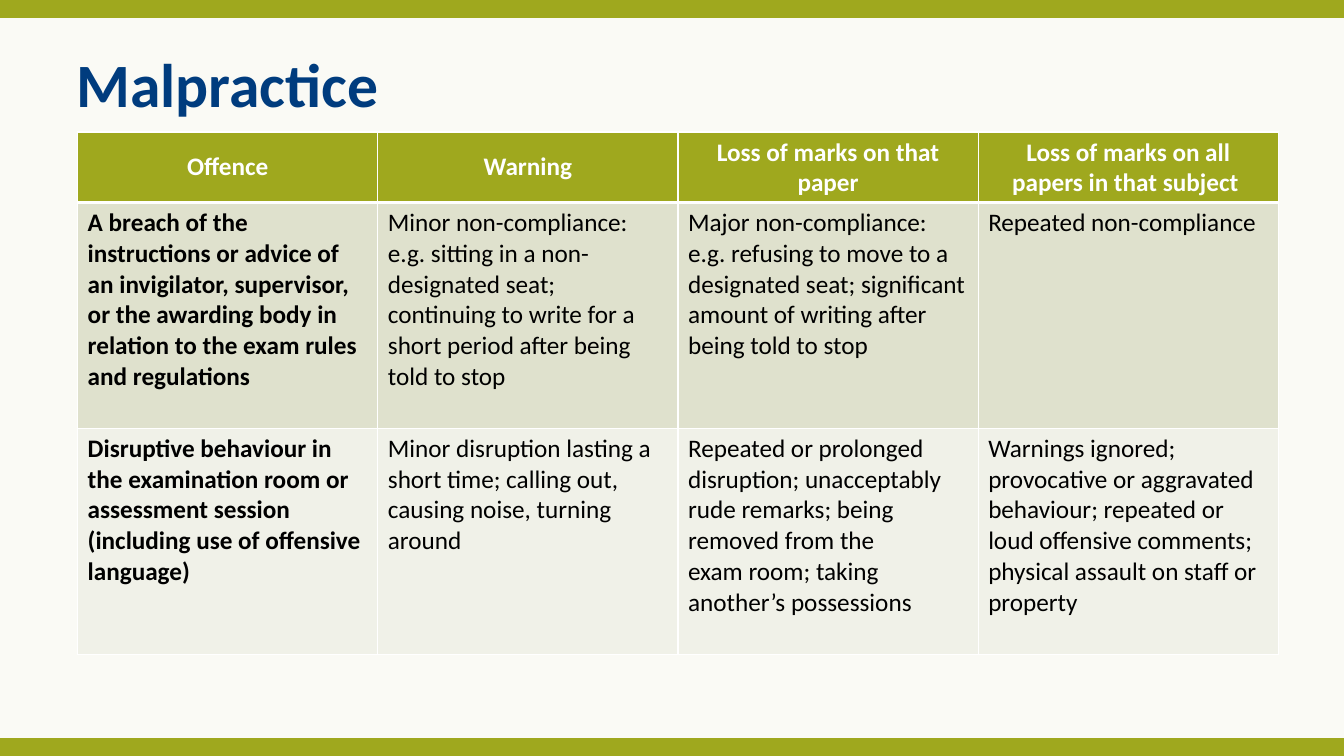
from dataclasses import dataclass

import pptx
import pptx.dml.color
import pptx.enum.dml
import pptx.enum.shapes
import pptx.enum.text
import pptx.oxml
import pptx.oxml.ns
import pptx.oxml.xmlchemy
import pptx.util


@dataclass(frozen=True)
class Theme:
    """Colours, font and type sizes of the slide."""
    font: str = "Calibri"
    green: str = "9FA81E"
    navy: str = "003C7E"
    paper: str = "FAFAF5"
    white: str = "FFFFFF"
    black: str = "000000"
    bands: tuple = ("DFE1CD", "F0F1E8")
    title_size: int = 44
    table_size: int = 18
    bar: int = 13
    rule: int = 1
    header_rule: int = 3


THEME = Theme()
WIDTH, HEIGHT = 13.33, 7.5
HEADINGS = ["Offence", "Warning", "Loss of marks on that paper",
            "Loss of marks on all papers in that subject "]
OFFENCES = [
    [["A breach of the instructions or advice of an invigilator, supervisor, "
      "or the awarding body in relation to the exam rules and regulations"],
     ["Minor non-compliance: e.g. sitting in a non-designated seat; "
      "continuing to write for a short period after being told to stop"],
     ["Major non-compliance: e.g. refusing to move to a designated seat; "
      "significant amount of writing after being told to stop"],
     ["Repeated non-compliance"]],
    [["Disruptive behaviour in the examination room or assessment session",
      "(including use of offensive language)"],
     ["Minor disruption lasting a short time; calling out,",
      "causing noise, turning", "around"],
     ["Repeated or prolonged", "disruption; unacceptably",
      "rude remarks; being", "removed from the",
      "exam room; taking another’s possessions"],
     ["Warnings ignored;",
      "provocative or aggravated behaviour; repeated or loud offensive comments;",
      "physical assault on staff or property"]],
]


def rgb(value):
    """Turn a hex string into a colour."""
    return pptx.dml.color.RGBColor.from_string(value)


def emu(*inches):
    """Turn inches into a list of lengths."""
    return [pptx.util.Inches(n) for n in inches]


def add_run(p, text, size, color, bold):
    """Add one styled run to a paragraph."""
    r = p.add_run()
    r.text = text
    r.font.name = THEME.font
    r.font.size = pptx.util.Pt(size)
    r.font.bold = bold
    r.font.color.rgb = rgb(color)


def add_backdrop(s, box):
    """Cover the box with striped paper and a bar along its top and bottom."""
    left, top, width, height = box
    sp = s.shapes.add_shape(pptx.enum.shapes.MSO_SHAPE.RECTANGLE, *emu(*box))
    sp.shadow.inherit = False
    sp.fill.patterned()
    sp.fill.pattern = pptx.enum.dml.MSO_PATTERN.DARK_HORIZONTAL
    sp.fill.fore_color.rgb = rgb(THEME.paper)
    sp.fill.back_color.rgb = rgb(THEME.white)
    sp.line.fill.background()
    inset = THEME.bar / 72 / 2
    for y in (top + inset, top + height - inset):
        bar = s.shapes.add_connector(pptx.enum.shapes.MSO_CONNECTOR.STRAIGHT,
                                     *emu(left, y, left + width, y))
        bar.line.color.rgb = rgb(THEME.green)
        bar.line.width = pptx.util.Pt(THEME.bar)
        bar._element.spPr.append(pptx.oxml.xmlchemy.OxmlElement("a:effectLst"))


def add_title(s, box, text):
    """Place the slide title in the box."""
    tf = s.shapes.add_textbox(*emu(*box)).text_frame
    tf.word_wrap = True
    tf.vertical_anchor = pptx.enum.text.MSO_ANCHOR.TOP
    p = tf.paragraphs[0]
    p.line_spacing = 0.9
    add_run(p, text, THEME.title_size, THEME.navy, True)


def set_borders(cell, top, bottom):
    """Draw white borders around a cell, with top and bottom widths in points."""
    tc_pr = cell._tc.get_or_add_tcPr()
    widths = {"L": THEME.rule, "R": THEME.rule, "T": top, "B": bottom}
    for i, (side, width) in enumerate(widths.items()):
        ln = pptx.oxml.parse_xml(
            f'<a:ln{side} {pptx.oxml.ns.nsdecls("a")} w="{int(pptx.util.Pt(width))}">'
            f'<a:solidFill><a:srgbClr val="{THEME.white}"/></a:solidFill></a:ln{side}>')
        tc_pr.insert(i, ln)


def fill_cell(cell, paragraphs, row, col):
    """Write and style one cell by its place in the table."""
    header = row == 0
    cell.fill.solid()
    cell.fill.fore_color.rgb = rgb(THEME.green if header else THEME.bands[(row - 1) % 2])
    set_borders(cell, THEME.header_rule if row == 1 else THEME.rule,
                THEME.header_rule if header else THEME.rule)
    anchor = pptx.enum.text.MSO_ANCHOR
    cell.vertical_anchor = anchor.MIDDLE if header else anchor.TOP
    align = pptx.enum.text.PP_ALIGN
    tf = cell.text_frame
    for i, text in enumerate(paragraphs):
        p = tf.add_paragraph() if i else tf.paragraphs[0]
        p.alignment = align.CENTER if header else align.LEFT
        add_run(p, text, THEME.table_size,
                THEME.white if header else THEME.black, header or col == 0)


def add_penalties(s, box, header_height):
    """Fill the box with the table of offences and penalties."""
    rows = [[[heading] for heading in HEADINGS]] + OFFENCES
    tbl = s.shapes.add_table(len(rows), len(HEADINGS), *emu(*box)).table
    tbl.first_row = False
    tbl.horz_banding = False
    body_height = (box[3] - header_height) / len(OFFENCES)
    for col in tbl.columns:
        col.width = pptx.util.Inches(box[2] / len(HEADINGS))
    for i, row in enumerate(rows):
        tbl.rows[i].height = pptx.util.Inches(body_height if i else header_height)
        for j, paragraphs in enumerate(row):
            fill_cell(tbl.cell(i, j), paragraphs, i, j)


def main():
    """Build the slide and save it."""
    prs = pptx.Presentation()
    prs.slide_width, prs.slide_height = emu(WIDTH, HEIGHT)
    s = prs.slides.add_slide(prs.slide_layouts[6])
    add_backdrop(s, (0, 0, WIDTH, HEIGHT))
    add_title(s, (0.66, 0.49, 12.03, 0.92), "Malpractice")
    add_penalties(s, (0.77, 1.31, 11.91, 5.18), 0.7)
    prs.save("out.pptx")


if __name__ == "__main__":
    main()
